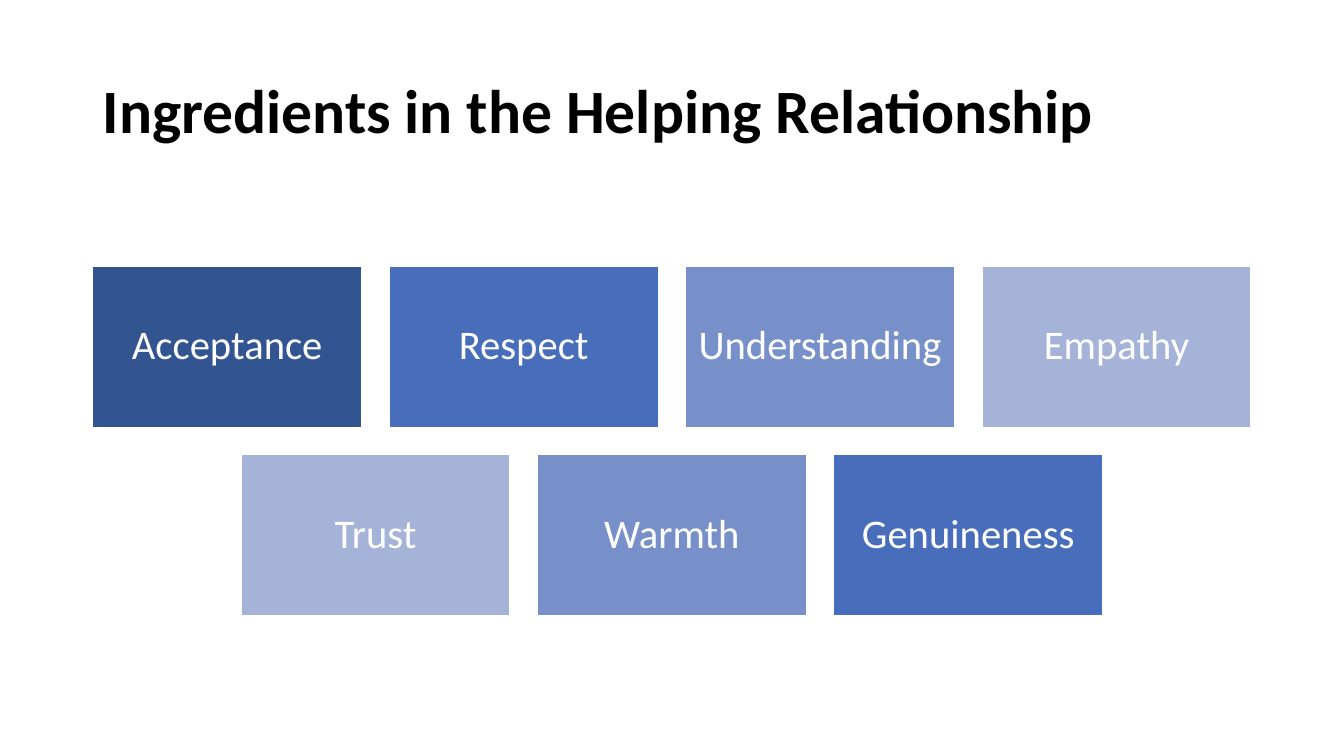
from pptx import Presentation
from pptx.dml.color import RGBColor
from pptx.enum.shapes import MSO_SHAPE
from pptx.enum.text import MSO_ANCHOR, PP_ALIGN
from pptx.util import Inches, Pt

RECT = MSO_SHAPE.RECTANGLE
MIDDLE = MSO_ANCHOR.MIDDLE
LEFT, CENTER = PP_ALIGN.LEFT, PP_ALIGN.CENTER

WIDTH, HEIGHT = 13.33, 7.5
CARD_W, CARD_H, GAP = 2.67, 1.6, 0.27
TOP = 2.64
WHITE, BLACK = "FFFFFF", "000000"
NAVY, BLUE, SOFT, PALE = "325491", "476DBB", "7790C9", "A6B3D9"

ROWS = [
    [("Acceptance", NAVY), ("Respect", BLUE),
     ("Understanding", SOFT), ("Empathy", PALE)],
    [("Trust", PALE), ("Warmth", SOFT), ("Genuineness", BLUE)],
]


def color(code):
    return RGBColor.from_string(code)


def put(item, values):
    """Set each named attribute of item."""
    for name, value in values.items():
        setattr(item, name, value)


def write(shape, text, size, ink, align, inset, bold=False):
    frame = shape.text_frame
    put(frame, {"word_wrap": True, "vertical_anchor": MIDDLE,
                "margin_left": Inches(inset), "margin_right": Inches(inset)})
    para = frame.paragraphs[0]
    put(para, {"text": text, "alignment": align, "line_spacing": 0.9})
    font = para.runs[0].font
    put(font, {"name": "Calibri", "size": Pt(size), "bold": bold})
    font.color.rgb = color(ink)


def add_title(slide, text):
    box = slide.shapes.add_textbox(
        Inches(0.92), Inches(0.4), Inches(11.5), Inches(1.45))
    write(box, text, 44, BLACK, LEFT, 0.1, bold=True)


def add_card(slide, left, top, text, fill):
    card = slide.shapes.add_shape(
        RECT, Inches(left), Inches(top), Inches(CARD_W), Inches(CARD_H))
    card.shadow.inherit = False
    card.fill.solid()
    card.fill.fore_color.rgb = color(fill)
    card.line.color.rgb = color(WHITE)
    card.line.width = Pt(1)
    write(card, text, 29, WHITE, CENTER, 0.12)


def add_row(slide, top, cards):
    """Lay cards side by side, centred on the slide."""
    step = CARD_W + GAP
    left = (WIDTH - len(cards) * step + GAP) / 2
    for col, (text, fill) in enumerate(cards):
        add_card(slide, left + col * step, top, text, fill)


def main():
    deck = Presentation()
    put(deck, {"slide_width": Inches(WIDTH), "slide_height": Inches(HEIGHT)})
    slide = deck.slides.add_slide(deck.slide_layouts[6])
    add_title(slide, "Ingredients in the Helping Relationship")
    for row, cards in enumerate(ROWS):
        add_row(slide, TOP + row * (CARD_H + GAP), cards)
    deck.save("out.pptx")


if __name__ == "__main__":
    main()
